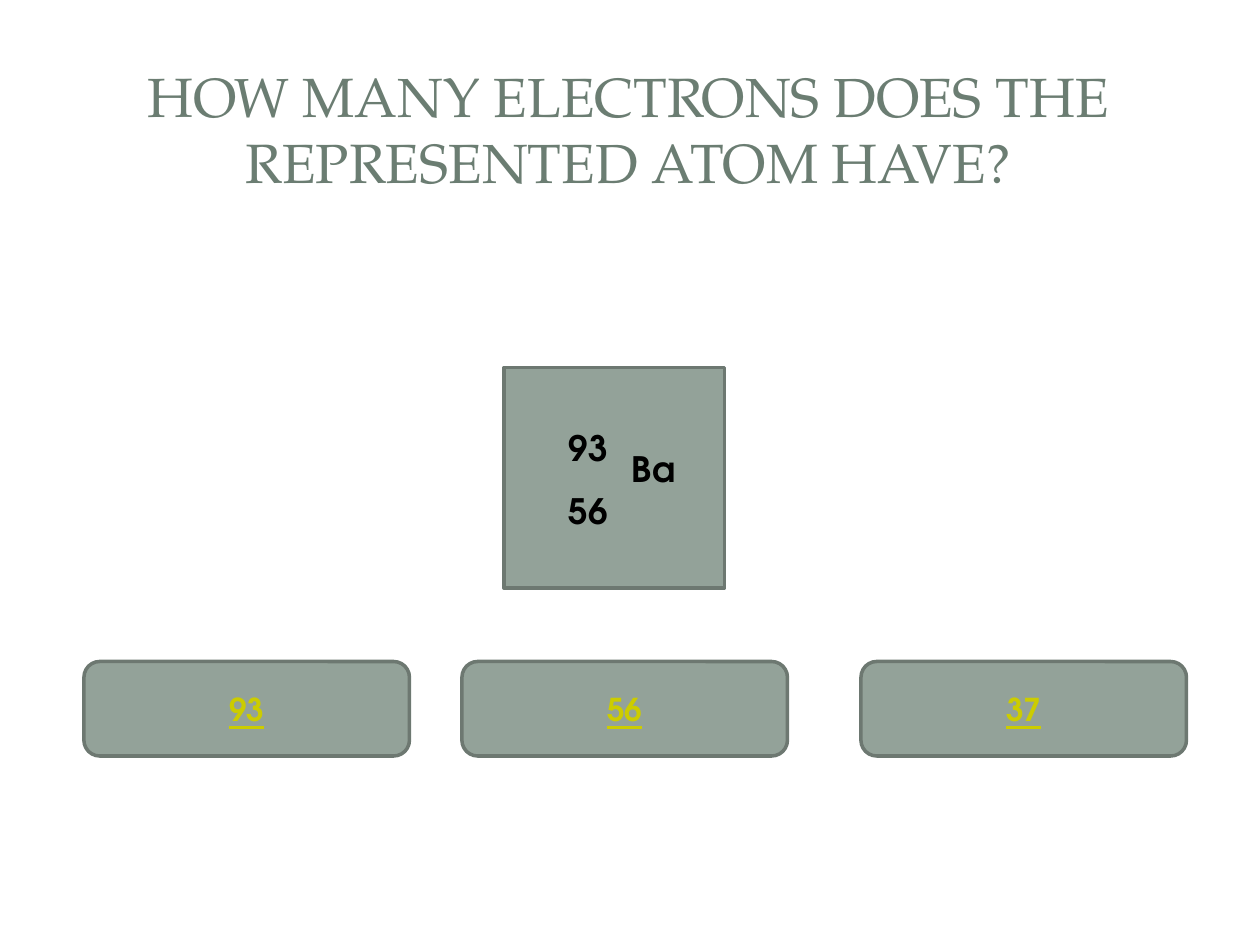
"""Build a quiz slide asking for the number of electrons in an atom."""
from dataclasses import dataclass

import pptx
import pptx.dml.color
import pptx.enum.shapes
import pptx.enum.text
import pptx.util

Pt = pptx.util.Pt
Shapes = pptx.enum.shapes.MSO_SHAPE
Align = pptx.enum.text.PP_ALIGN
Anchor = pptx.enum.text.MSO_ANCHOR

COLORS = {
    "title": "6B7D72",
    "panel": "93A299",
    "border": "6D7871",
    "symbol": "000000",
    "answer": "CCCC00",
}
FORMATS = {
    "title": {"name": "TeX Gyre Pagella", "size": Pt(31.5)},
    "symbol": {"name": "TeX Gyre Adventor", "size": Pt(20), "bold": True},
    "answer": {"name": "TeX Gyre Adventor", "size": Pt(18), "bold": True, "underline": True},
}


@dataclass(frozen=True)
class Box:
    """A rectangle measured in points."""

    left: float
    top: float
    width: float
    height: float

    def lengths(self) -> tuple:
        """Return the four lengths for python-pptx."""
        return Pt(self.left), Pt(self.top), Pt(self.width), Pt(self.height)


@dataclass(frozen=True)
class Label:
    """A text with its place and role."""

    text: str
    box: Box
    role: str = "symbol"
    align: Align = Align.LEFT
    anchor: Anchor = Anchor.TOP


def write(holder, text: str, role: str, align: Align, anchor: Anchor) -> None:
    """Put one formatted paragraph into a shape."""
    frame = holder.text_frame
    frame.word_wrap = True
    frame.vertical_anchor = anchor
    paragraph = frame.paragraphs[0]
    paragraph.alignment = align
    run = paragraph.add_run()
    run.text = text
    for attribute, value in FORMATS[role].items():
        setattr(run.font, attribute, value)
    run.font.color.rgb = pptx.dml.color.RGBColor.from_string(COLORS[role])


def draw_label(shapes, label: Label) -> None:
    """Draw a text box."""
    holder = shapes.add_textbox(*label.box.lengths())
    write(holder, label.text, label.role, label.align, label.anchor)


def draw_panel(shapes, outline: Shapes, box: Box):
    """Draw a filled panel with a border."""
    panel = shapes.add_shape(outline, *box.lengths())
    panel.shadow.inherit = False
    panel.fill.solid()
    panel.fill.fore_color.rgb = pptx.dml.color.RGBColor.from_string(COLORS["panel"])
    panel.line.color.rgb = pptx.dml.color.RGBColor.from_string(COLORS["border"])
    panel.line.width = Pt(2)
    return panel


def draw_answer(shapes, text: str, left: float) -> None:
    """Draw one answer button."""
    button = draw_panel(shapes, Shapes.ROUNDED_RECTANGLE, Box(left, 378, 186, 54))
    write(button, text, "answer", Align.CENTER, Anchor.MIDDLE)


QUESTION = Label(
    "HOW MANY ELECTRONS DOES THE REPRESENTED ATOM HAVE?",
    Box(34, 32.5, 650, 82),
    "title",
    Align.CENTER,
    Anchor.MIDDLE,
)
ATOM_TILE = Box(288, 210, 126, 126)
ATOM_LABELS = (
    Label("Ba", Box(354, 252, 48, 31.5)),
    Label("93", Box(318, 240, 42, 31.5)),
    Label("56", Box(318, 276, 42, 31.5)),
)
ANSWERS = {"93": 48, "56": 264, "37": 492}


def main() -> None:
    """Build and save the slide."""
    deck = pptx.Presentation()
    deck.slide_width, deck.slide_height = Pt(720), Pt(540)
    shapes = deck.slides.add_slide(deck.slide_layouts[6]).shapes
    draw_label(shapes, QUESTION)
    atom = shapes.add_group_shape().shapes
    draw_panel(atom, Shapes.RECTANGLE, ATOM_TILE)
    for label in ATOM_LABELS:
        draw_label(atom, label)
    for text, left in ANSWERS.items():
        draw_answer(shapes, text, left)
    deck.save("out.pptx")


if __name__ == "__main__":
    main()
